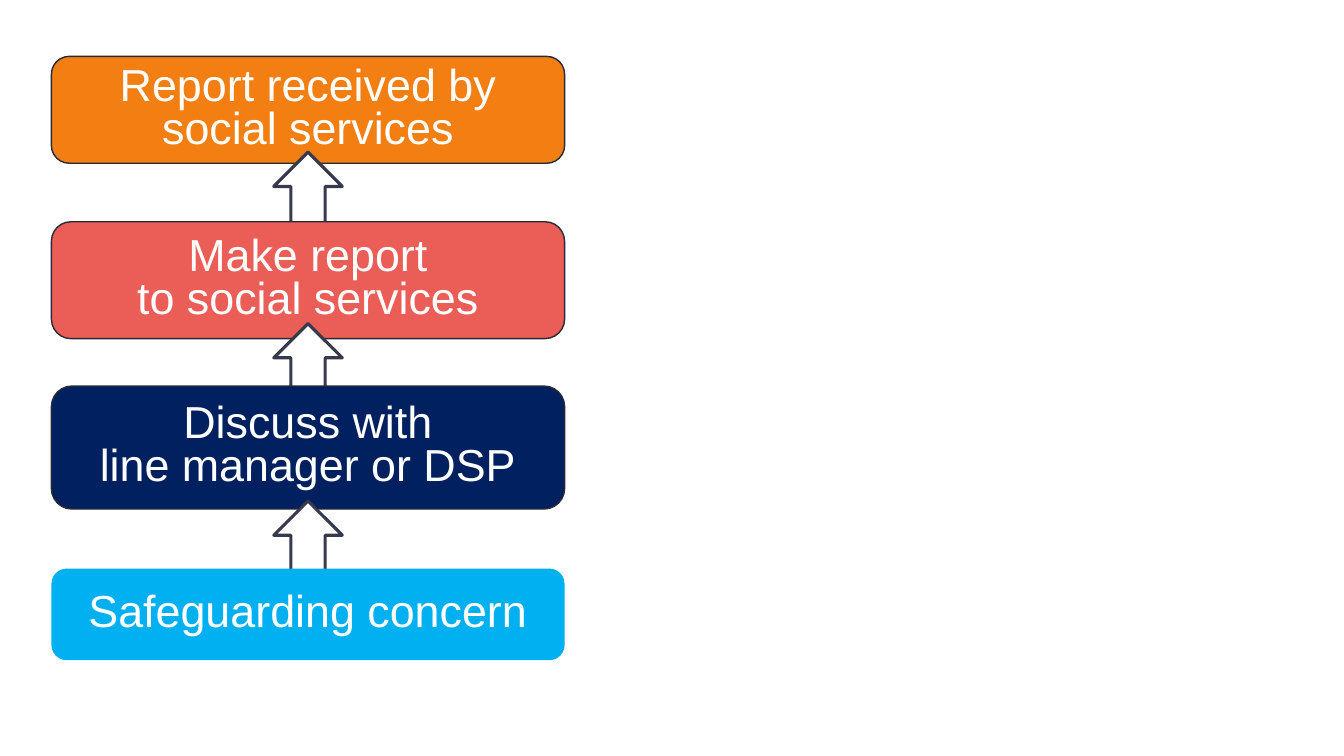
from dataclasses import dataclass

from pptx import Presentation
from pptx.dml.color import RGBColor
from pptx.enum.shapes import MSO_SHAPE
from pptx.enum.text import MSO_ANCHOR, PP_ALIGN
from pptx.util import Inches, Pt


@dataclass(frozen=True)
class Theme:
    font: str = "Arial"
    size: int = 32
    text: str = "FFFFFF"
    box_line: str = "292A38"
    arrow_fill: str = "FFFFFF"
    arrow_line: str = "37394C"
    received: str = "F37E12"
    report: str = "EB5E57"
    discuss: str = "002060"
    concern: str = "00B0F0"


THEME = Theme()
STEPS = [
    (0, 1.06, "Report received by social services", THEME.received, THEME.box_line),
    (1.64, 1.16, "Make report\vto social services", THEME.report, THEME.box_line),
    (3.27, 1.22, "Discuss with\vline manager or DSP", THEME.discuss, THEME.box_line),
    (5.08, 0.91, "Safeguarding concern", THEME.concern, None),
]
ARROW_TOPS = [0.95, 2.65, 4.41]
ARROW_WIDTH, ARROW_HEIGHT = 0.68, 0.81


def add_panel(page, kind, left, top, width, height, fill, line=None, weight=1):
    panel = page.shapes.add_shape(
        kind, Inches(left), Inches(top), Inches(width), Inches(height)
    )
    panel.shadow.inherit = False
    panel.fill.solid()
    panel.fill.fore_color.rgb = RGBColor.from_string(fill)
    if line:
        panel.line.color.rgb = RGBColor.from_string(line)
        panel.line.width = Pt(weight)
    else:
        panel.line.fill.background()
    return panel


def write_text(box, text, *, size, color, font, spacing):
    frame = box.text_frame
    frame.word_wrap = True
    frame.vertical_anchor = MSO_ANCHOR.MIDDLE
    para = frame.paragraphs[0]
    para.text = text
    para.alignment = PP_ALIGN.CENTER
    para.line_spacing = spacing
    for span in para.runs:
        span.font.name = font
        span.font.size = Pt(size)
        span.font.color.rgb = RGBColor.from_string(color)


def add_escalation(page, left, top, width):
    arrow_left = left + (width - ARROW_WIDTH) / 2
    for index, (offset, height, text, fill, line) in enumerate(STEPS):
        box = add_panel(page, MSO_SHAPE.ROUNDED_RECTANGLE,
                        left, top + offset, width, height, fill, line)
        write_text(box, text, size=THEME.size, color=THEME.text,
                   font=THEME.font, spacing=0.8)
        if index < len(ARROW_TOPS):
            add_panel(page, MSO_SHAPE.UP_ARROW,
                      arrow_left, top + ARROW_TOPS[index],
                      ARROW_WIDTH, ARROW_HEIGHT,
                      THEME.arrow_fill, THEME.arrow_line, weight=2.25)


def main():
    deck = Presentation()
    deck.slide_width, deck.slide_height = Inches(13.33), Inches(7.5)
    page = deck.slides.add_slide(deck.slide_layouts[6])
    add_escalation(page, left=0.51, top=0.56, width=5.09)
    deck.save("out.pptx")


if __name__ == "__main__":
    main()
